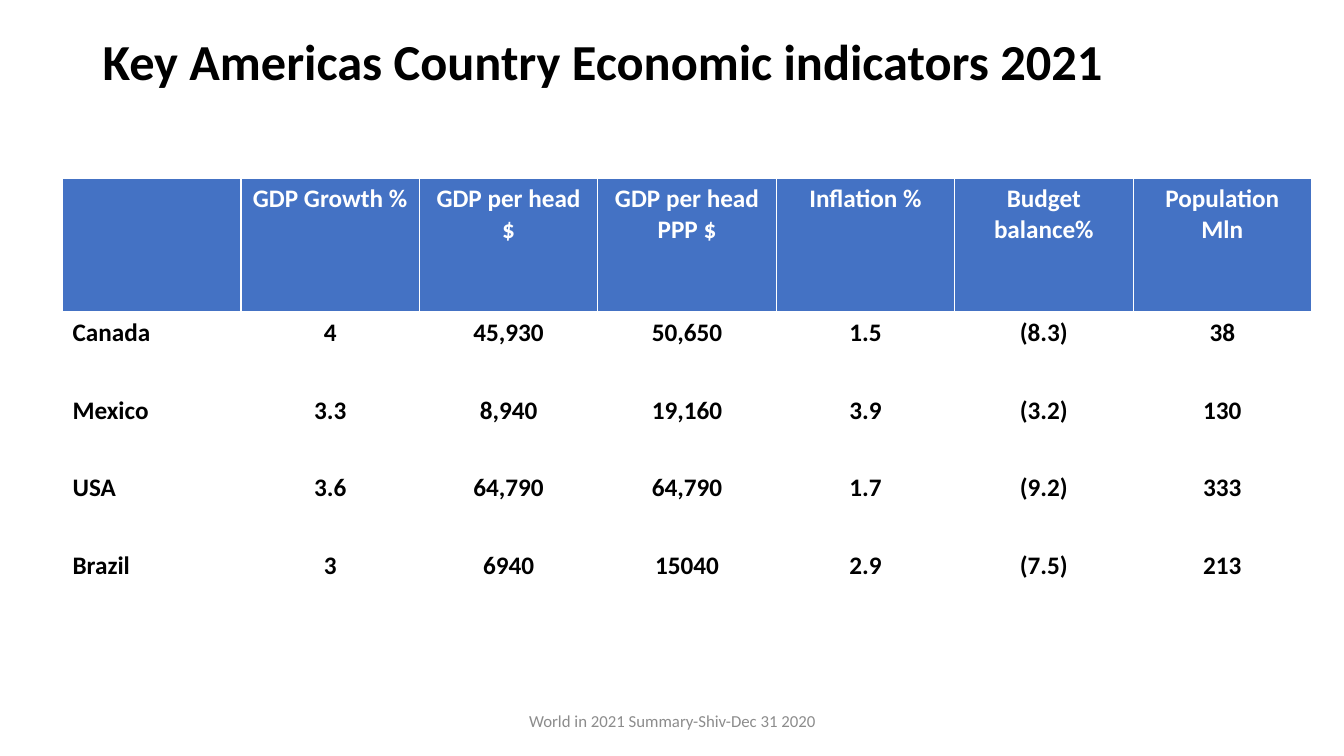
from lxml import etree
from pptx import Presentation
from pptx import util as u
from pptx.dml.color import RGBColor
from pptx.enum import text
from pptx.oxml import ns

PX = 9144
LEFT, CENTER = text.PP_ALIGN.LEFT, text.PP_ALIGN.CENTER

HEADINGS = ["", "GDP Growth %", "GDP per head $", "GDP per head PPP $",
            "Inflation %", "Budget balance%", "Population Mln"]
COUNTRIES = [
    ["Canada", "4", "45,930", "50,650", "1.5", "(8.3)", "38"],
    ["Mexico", "3.3", "8,940", "19,160", "3.9", "(3.2)", "130"],
    ["USA", "3.6", "64,790", "64,790", "1.7", "(9.2)", "333"],
    ["Brazil", "3", "6940", "15040", "2.9", "(7.5)", "213"],
]


def px(*lengths):
    return [u.Emu(length * PX) for length in lengths]


def color(value):
    return RGBColor.from_string(value)


class Page:
    """Draws styled elements on one slide, measured in px of 1/100 inch."""

    font = "Calibri"
    white, black, blue, gray = "FFFFFF", "000000", "4472C4", "8C8C8C"

    def __init__(self, deck):
        self.slide = deck.slides.add_slide(deck.slide_layouts[6])

    def set_text(self, para, words, size, ink, bold, align):
        para.text = words
        para.alignment = align
        para.font.name = self.font
        para.font.size = u.Pt(size)
        para.font.bold = bold
        para.font.color.rgb = color(ink)

    def label(self, area, words, size, ink, bold=False, align=LEFT):
        frame = self.slide.shapes.add_textbox(*px(*area)).text_frame
        frame.word_wrap = True
        frame.vertical_anchor = text.MSO_ANCHOR.MIDDLE
        para = frame.paragraphs[0]
        self.set_text(para, words, size, ink, bold, align)
        para.line_spacing = 0.9 if bold else 1.0

    def border(self, cell, side, points):
        properties = cell._tc.get_or_add_tcPr()
        line = etree.SubElement(properties, ns.qn(f"a:ln{side}"), w=str(u.Pt(points)))
        fill = etree.SubElement(line, ns.qn("a:solidFill"))
        etree.SubElement(fill, ns.qn("a:srgbClr"), val=self.white)

    def table(self, left, top, column_width, row_heights, rows):
        width, height = column_width * len(rows[0]), sum(row_heights)
        grid = self.slide.shapes.add_table(
            len(rows), len(rows[0]), *px(left, top, width, height)).table
        for column in grid.columns:
            column.width = px(column_width)[0]
        for r, (row, row_height) in enumerate(zip(rows, row_heights)):
            grid.rows[r].height = px(row_height)[0]
            header = r == 0
            for c, words in enumerate(row):
                cell = grid.cell(r, c)
                for side in "LRTB":
                    thick = (header and side == "B") or (r == 1 and side == "T")
                    self.border(cell, side, 3 if thick else 1)
                cell.fill.solid()
                cell.fill.fore_color.rgb = color(self.blue if header else self.white)
                self.set_text(cell.text_frame.paragraphs[0], words, 18,
                              self.white if header else self.black, True,
                              CENTER if c else LEFT)


def main():
    deck = Presentation()
    deck.slide_width, deck.slide_height = px(1333, 750)
    page = Page(deck)
    page.label((92, 23, 1150, 81), "Key Americas Country Economic indicators 2021",
               36, page.black, bold=True)
    page.table(62, 177, 177, [133] + [77] * len(COUNTRIES), [HEADINGS] + COUNTRIES)
    page.label((442, 695, 450, 40), "World in 2021 Summary-Shiv-Dec 31 2020",
               12, page.gray, align=CENTER)
    deck.save("out.pptx")


if __name__ == "__main__":
    main()
